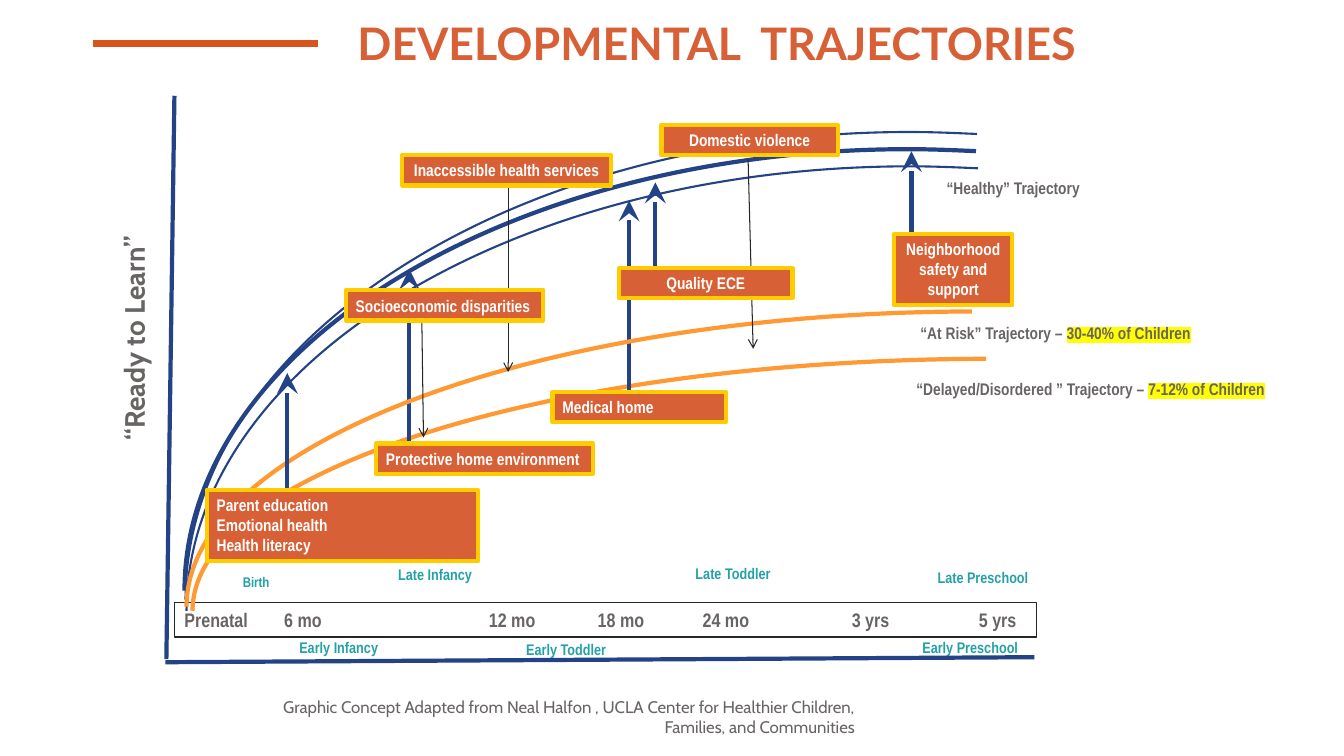
import pptx
import pptx.util
import pptx.dml.color
import pptx.enum.shapes
import pptx.enum.text
import pptx.oxml
import pptx.oxml.ns
from dataclasses import dataclass

Inches, Pt = pptx.util.Inches, pptx.util.Pt
ALIGN = pptx.enum.text.PP_ALIGN
TOP = pptx.enum.text.MSO_ANCHOR.TOP
SHAPE = pptx.enum.shapes.MSO_SHAPE


@dataclass(frozen=True)
class Theme:
    orange: str = "D86036"
    rule: str = "D9541C"
    navy: str = "244387"
    teal: str = "24A1A8"
    gray: str = "696464"
    ink: str = "232728"
    white: str = "FFFFFF"
    gold: str = "FFCC00"
    risk: str = "FF9933"
    highlight: str = "FFFF00"
    narrow: str = "Arial Narrow"
    label_font: str = "Cabin"
    title_font: str = "Lato"
    title_size: float = 32
    axis_size: float = 20
    age_size: float = 14
    body_size: float = 12
    stage_size: float = 11
    birth_size: float = 10


THEME = Theme()

# ---- Content: lengths in inches ----
TITLE = "DEVELOPMENTAL  TRAJECTORIES"
CREDIT = ("Graphic Concept Adapted from Neal Halfon , UCLA Center for Healthier "
          "Children, Families, and Communities")
# text, left, top, width
STAGES = [
    ("Birth", 2.31, 5.64, 0.48), ("Early Infancy", 2.87, 6.28, 0.99),
    ("Late Infancy", 3.85, 5.56, 0.94), ("Early Toddler", 5.12, 6.3, 1.01),
    ("Late Toddler", 6.8, 5.55, 0.96), ("Early Preschool", 9.05, 6.28, 1.16),
    ("Late Preschool", 9.2, 5.59, 1.11),
]
AGES = ["Prenatal", "6 mo", "12 mo", "18 mo", "24 mo", "3 yrs", "5 yrs"]
AGE_TABS = [0.99, 3.02, 4.1, 5.14, 6.62, 7.88]
# plain text, highlighted text, left, top, width
CURVE_LABELS = [
    ("“At Risk” Trajectory – ", "30-40% of Children", 9.03, 3.15, 2.92),
    ("“Delayed/Disordered ” Trajectory – ", "7-12% of Children", 8.99, 3.71, 4),
    ("“Healthy” Trajectory", "", 9.29, 1.71, 1.58),
]
# start point, then Bézier segments of two controls and an end
DELAYED = [(9.78, 3.56), ((5.42, 3.57), (1.91, 4.69), (1.91, 6.06))]
AT_RISK = [(9.64, 3.09), ((5.33, 3.1), (1.85, 4.41), (1.85, 6.02))]
# right end, top, left end, bottom, line width
HEALTHY = [(9.68, 1.48, 1.83, 5.86, 3), (9.69, 1.31, 1.84, 5.95, 1.5),
           (9.7, 1.65, 1.85, 6.06, 1.5)]
# lines, left, top, width, height, alignment, arrow x, arrow start y, arrow end y
LOWER_SUPPORTS = [
    (["Protective home environment"], 3.73, 4.4, 2.15, 0.3, ALIGN.LEFT, 4.06, 4.39, 2.67),
    (["Neighborhood safety and support"], 8.87, 2.32, 1.17, 0.71, ALIGN.CENTER, 9.04, 2.91, 1.5),
    (["Medical home"], 5.48, 3.89, 1.72, 0.3, ALIGN.LEFT, 6.24, 3.92, 1.99),
]
UPPER_SUPPORTS = [
    (["Quality ECE"], 6.14, 2.66, 1.72, 0.3, ALIGN.CENTER, 6.5, 2.67, 1.81),
    (["Parent education", "Emotional health", "Health literacy"],
     2.05, 4.86, 2.69, 0.71, ALIGN.LEFT, 2.85, 5.02, 3.7),
]
# text, left, top, width, alignment, arrow start, arrow end
BARRIERS = [
    ("Socioeconomic disparities", 3.43, 2.88, 1.96, ALIGN.LEFT, (4.18, 2.9), (4.2, 4.34)),
    ("Inaccessible health services", 3.99, 1.54, 2.07, ALIGN.CENTER, (5.04, 1.7), (5.04, 3.69)),
    ("Domestic violence", 6.56, 1.24, 1.75, ALIGN.CENTER, (7.42, 1.58), (7.47, 3.46)),
]

deck = pptx.Presentation()
deck.slide_width, deck.slide_height = Inches(13.33), Inches(7.5)
page = deck.slides.add_slide(deck.slide_layouts[5])


# ---- Helpers ----
def rgb(code):
    return pptx.dml.color.RGBColor.from_string(code)


def add_xml(parent, tag, **attributes):
    element = pptx.oxml.parse_xml(f"<a:{tag} {pptx.oxml.ns.nsdecls('a')}/>")
    for name, value in attributes.items():
        element.set(name, str(value))
    parent.append(element)
    return element


def style(para, size, color, font=THEME.narrow, bold=True, align=ALIGN.LEFT):
    para.alignment = align
    para.font.size, para.font.name, para.font.bold = Pt(size), font, bold
    para.font.color.rgb = rgb(color)


def add_text(text, left, top, width, height, size, color, wrap=True, **options):
    box = page.shapes.add_textbox(*map(Inches, (left, top, width, height)))
    box.text_frame.word_wrap = wrap
    para = box.text_frame.paragraphs[0]
    para.add_run().text = text
    style(para, size, color, **options)
    return box


def add_line(start, end, color, width, head=None, head_size="med"):
    line = page.shapes.add_connector(pptx.enum.shapes.MSO_CONNECTOR.STRAIGHT,
                                     *map(Inches, (*start, *end)))
    line.line.color.rgb, line.line.width = rgb(color), Pt(width)
    add_xml(line._element.spPr, "effectLst")
    if head:
        add_xml(line.line._get_or_add_ln(), "tailEnd", type=head, w=head_size, len=head_size)


def add_rect(left, top, width, height, fill, border, border_width):
    rect = page.shapes.add_shape(SHAPE.RECTANGLE, *map(Inches, (left, top, width, height)))
    rect.shadow.inherit = False
    rect.fill.solid()
    rect.fill.fore_color.rgb = rgb(fill)
    rect.line.color.rgb, rect.line.width = rgb(border), Pt(border_width)
    return rect


def add_factor(lines, left, top, width, height, align):
    rect = add_rect(left, top, width, height, THEME.orange, THEME.gold, 3)
    rect.text_frame.word_wrap = height > 0.3
    rect.text_frame.vertical_anchor = TOP
    rect.text_frame.text = "\n".join(lines)
    for para in rect.text_frame.paragraphs:
        style(para, THEME.body_size, THEME.white, align=align)


def add_supports(supports):
    for *factor, x, start, end in supports:
        add_line((x, start), (x, end), THEME.navy, 3, "stealth", "lg")
        add_factor(*factor)


def add_curve(curve, color, width):
    start, *segments = curve
    ends = [start] + [segment[-1] for segment in segments]
    builder = page.shapes.build_freeform(*map(Inches, start), scale=1.0)
    builder.add_line_segments([tuple(map(Inches, end)) for end in ends[1:]], close=False)
    shape = builder.convert_to_shape()
    # Each straight segment becomes a cubic Bézier
    left, top = min(x for x, _ in ends), min(y for _, y in ends)
    straight_lines = list(shape._element.iter(pptx.oxml.ns.qn("a:lnTo")))
    for straight, segment in zip(straight_lines, segments):
        cubic = add_xml(straight.getparent(), "cubicBezTo")
        for x, y in segment:
            add_xml(cubic, "pt", x=Inches(x - left), y=Inches(y - top))
        straight.getparent().replace(straight, cubic)
    shape.shadow.inherit = False
    shape.fill.background()
    shape.line.color.rgb, shape.line.width = rgb(color), Pt(width)


# ---- Title and rule ----
add_line((0.92, 0.43), (3.15, 0.43), THEME.rule, 5)
title = page.shapes.title
title.left, title.top, title.width, title.height = map(Inches, (2.88, 0.11, 8.46, 0.64))
title.text_frame.text = TITLE
title.text_frame.vertical_anchor = TOP
style(title.text_frame.paragraphs[0], THEME.title_size, THEME.orange,
      THEME.title_font, align=ALIGN.CENTER)

# ---- Stages and age strip ----
for text, left, top, width in STAGES:
    size = THEME.birth_size if text == "Birth" else THEME.stage_size
    add_text(text, left, top, width, 0.29, size, THEME.teal, wrap=False)
strip = add_rect(1.73, 5.98, 8.55, 0.34, THEME.white, THEME.ink, 1)
strip.text_frame.text = "\t".join(AGES)
ages = strip.text_frame.paragraphs[0]
tabs = add_xml(ages._p.get_or_add_pPr(), "tabLst")
for position in AGE_TABS:
    add_xml(tabs, "tab", pos=Inches(position), algn="l")
style(ages, THEME.age_size, THEME.gray)

# ---- Vertical axis and labels ----
add_line((1.65, 6.54), (1.73, 0.95), THEME.navy, 3)
axis = add_text("“Ready to Learn”", -0.08, 2.84, 2.82, 0.44,
                THEME.axis_size, THEME.gray, font=THEME.label_font)
axis.rotation = 270
for text, marked, left, top, width in CURVE_LABELS:
    label = add_text(text, left, top, width, 0.3, THEME.body_size, THEME.gray)
    if marked:
        span = label.text_frame.paragraphs[0].add_run()
        span.text = marked
        mark = add_xml(span.font._element, "highlight")
        add_xml(mark, "srgbClr", val=THEME.highlight)

# ---- Trajectories, supports and barriers ----
add_curve(DELAYED, THEME.risk, 3)
for right, top, left, bottom, width in HEALTHY:
    peak, drop = right - 0.67, bottom - top
    add_curve([(right, top + 0.02),
               ((right - 0.22, top + 0.01), (right - 0.44, top), (peak, top)),
               ((peak - 3.97, top), (left, top + 0.45 * drop), (left, bottom))],
              THEME.navy, width)
add_supports(LOWER_SUPPORTS)
add_curve(AT_RISK, THEME.risk, 3)
for *_, start, end in BARRIERS:
    add_line(start, end, THEME.ink, 0.75, "arrow")
for text, left, top, width, align, *_ in BARRIERS:
    add_factor([text], left, top, width, 0.3, align)

# ---- Credit, upper supports and horizontal axis ----
add_text(CREDIT, 2.47, 6.86, 6.11, 0.5, THEME.body_size, THEME.gray,
         font=THEME.label_font, bold=False, align=ALIGN.RIGHT)
add_supports(UPPER_SUPPORTS)
add_line((1.64, 6.57), (10.26, 6.52), THEME.navy, 3)

deck.save("out.pptx")
